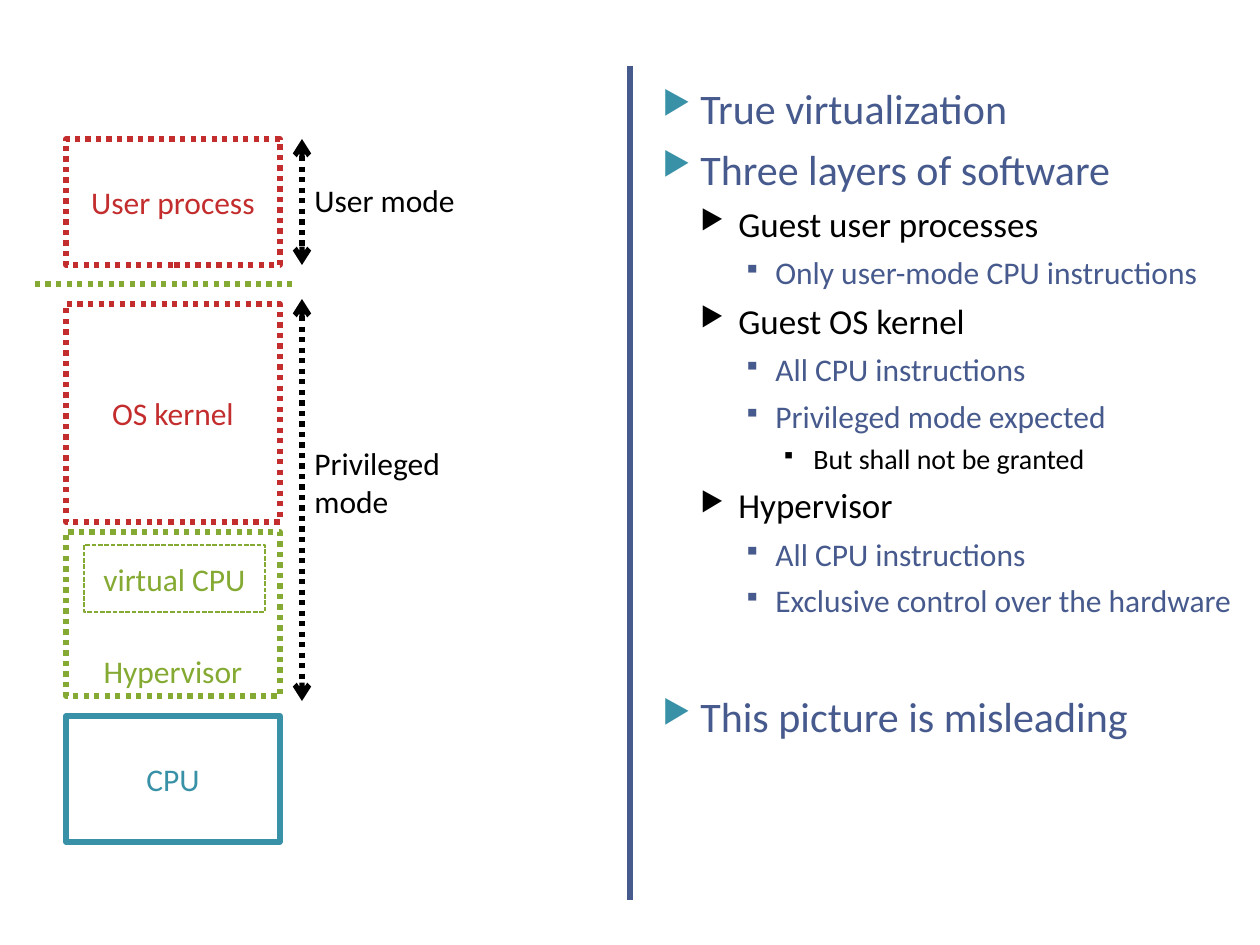
"""Build a slide on the software layers of true virtualization."""
from dataclasses import dataclass

from lxml.etree import SubElement
from pptx import Presentation
from pptx.dml.color import RGBColor
from pptx.enum.dml import MSO_LINE_DASH_STYLE as Dash
from pptx.enum.shapes import MSO_CONNECTOR_TYPE as Connector, MSO_SHAPE as Shape
from pptx.enum.text import MSO_ANCHOR as Anchor, PP_ALIGN as Align
from pptx.oxml.ns import qn
from pptx.util import Emu, Pt


@dataclass(frozen=True)
class Theme:
    font: str = "Calibri"
    navy: str = "475A8D"
    teal: str = "3891A7"
    red: str = "C32D2E"
    green: str = "84AA33"
    black: str = "000000"
    white: str = "FFFFFF"
    label: int = 18
    thin: float = 0.9
    thick: int = 3
    divider: int = 4


THEME = Theme()
PX = 914400 / 126
STACK_LEFT, STACK_WIDTH = 66, 214
MODE_X, MODE_WIDTH = 302, 168

LAYERS = [
    ("Hypervisor", 532, 164, THEME.green, THEME.white, Dash.ROUND_DOT, Anchor.BOTTOM),
    ("User process", 139, 126, THEME.red, None, Dash.ROUND_DOT, Anchor.MIDDLE),
    ("OS kernel", 304, 218, THEME.red, None, Dash.ROUND_DOT, Anchor.MIDDLE),
    ("CPU", 716, 126, THEME.teal, None, None, Anchor.MIDDLE),
]
MODES = [
    ("User mode", 139, 265, 175, 50),
    ("Privileged mode", 299, 701, 438, 89),
]
OUTLINE = [
    (0, "True virtualization"),
    (0, "Three layers of software"),
    (1, "Guest user processes"),
    (2, "Only user-mode CPU instructions"),
    (1, "Guest OS kernel"),
    (2, "All CPU instructions"),
    (2, "Privileged mode expected"),
    (3, "But shall not be granted"),
    (1, "Hypervisor"),
    (2, "All CPU instructions"),
    (2, "Exclusive control over the hardware"),
]
CONCLUSION = "This picture is misleading"
CONCLUSION_GAP = 41
LEVELS = [
    dict(size=24, color=THEME.navy, before=6, margin=38, hanging=38,
         bullet=("▶", THEME.teal, 76)),
    dict(size=20, color=THEME.black, before=5, margin=76, hanging=38,
         bullet=("▶", THEME.black, 76)),
    dict(size=18, color=THEME.navy, before=5, margin=113, hanging=32,
         bullet=("▪", THEME.navy, 76)),
    dict(size=16, color=THEME.black, before=4, margin=151, hanging=32,
         bullet=("▪", THEME.black, 70)),
]


def px(value):
    return Emu(round(value * PX))


def rgb(color):
    return RGBColor.from_string(color)


def write(paragraph, text, size=THEME.label, color=THEME.black, align=Align.LEFT,
          before=0, margin=0, hanging=0, bullet=None):
    run = paragraph.add_run()
    run.text = text
    run.font.name, run.font.size = THEME.font, Pt(size)
    run.font.color.rgb = rgb(color)
    paragraph.alignment = align
    paragraph.space_before = Pt(before)
    if bullet:
        character, bullet_color, percent = bullet
        properties = paragraph._p.get_or_add_pPr()
        properties.set("marL", str(px(margin)))
        properties.set("indent", str(-px(hanging)))
        fill = SubElement(properties, qn("a:buClr"))
        SubElement(fill, qn("a:srgbClr"), val=bullet_color)
        SubElement(properties, qn("a:buSzPct"), val=str(percent * 1000))
        SubElement(properties, qn("a:buChar"), char=character)


def style_line(line, color, width, dash):
    line.color.rgb = rgb(color)
    line.width = Pt(width)
    if dash:
        line.dash_style = dash


def add_box(slide, text, left, top, width, height, color, fill, dash, anchor,
            weight=THEME.thick):
    shape = slide.shapes.add_shape(Shape.RECTANGLE, px(left), px(top), px(width), px(height))
    shape.shadow.inherit = False
    if fill:
        shape.fill.solid()
        shape.fill.fore_color.rgb = rgb(fill)
    else:
        shape.fill.background()
    style_line(shape.line, color, weight, dash)
    shape.text_frame.vertical_anchor = anchor
    write(shape.text_frame.paragraphs[0], text, color=color, align=Align.CENTER)


def add_line(slide, start, end, color, width, dash=None, arrows=False):
    connector = slide.shapes.add_connector(Connector.STRAIGHT, *map(px, start + end))
    style_line(connector.line, color, width, dash)
    properties = connector._element.spPr
    if arrows:
        for tag in ("a:headEnd", "a:tailEnd"):
            SubElement(properties.find(qn("a:ln")), qn(tag), type="arrow")
    SubElement(properties, qn("a:effectLst"))


def add_text_frame(slide, left, top, width, height):
    frame = slide.shapes.add_textbox(px(left), px(top), px(width), px(height)).text_frame
    frame.word_wrap = True
    return frame


def add_outline(slide):
    frame = add_text_frame(slide, 650, 76, 595, 814)
    items = [(text, LEVELS[level]) for level, text in OUTLINE]
    items.append((CONCLUSION, LEVELS[0] | {"before": CONCLUSION_GAP}))
    for index, (text, style) in enumerate(items):
        paragraph = frame.add_paragraph() if index else frame.paragraphs[0]
        write(paragraph, text, **style)


def main():
    presentation = Presentation()
    presentation.slide_width, presentation.slide_height = px(1260), px(945)
    slide = presentation.slides.add_slide(presentation.slide_layouts[6])
    add_line(slide, (630, 66), (630, 900), THEME.navy, THEME.divider)
    for text, top, height, *style in LAYERS:
        add_box(slide, text, STACK_LEFT, top, STACK_WIDTH, height, *style)
    add_box(slide, "virtual CPU", 84, 545, 181, 67, THEME.green, THEME.white,
            Dash.SQUARE_DOT, Anchor.MIDDLE, weight=THEME.thin)
    add_line(slide, (35, 284), (292, 284), THEME.green, THEME.thick, Dash.ROUND_DOT)
    for text, start, end, top, height in MODES:
        add_line(slide, (MODE_X, start), (MODE_X, end), THEME.black, THEME.thick,
                 Dash.ROUND_DOT, arrows=True)
        frame = add_text_frame(slide, MODE_X, top, MODE_WIDTH, height)
        write(frame.paragraphs[0], text)
    add_outline(slide)
    presentation.save("out.pptx")


if __name__ == "__main__":
    main()
